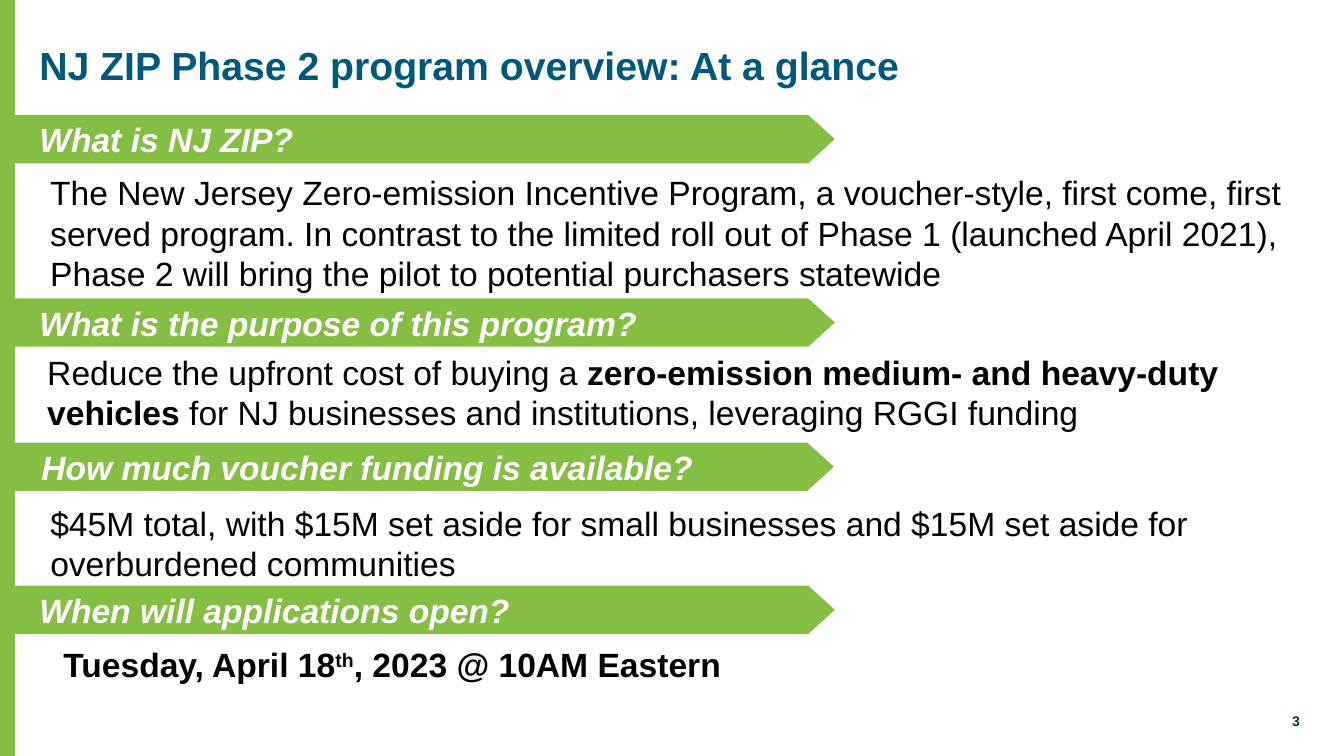
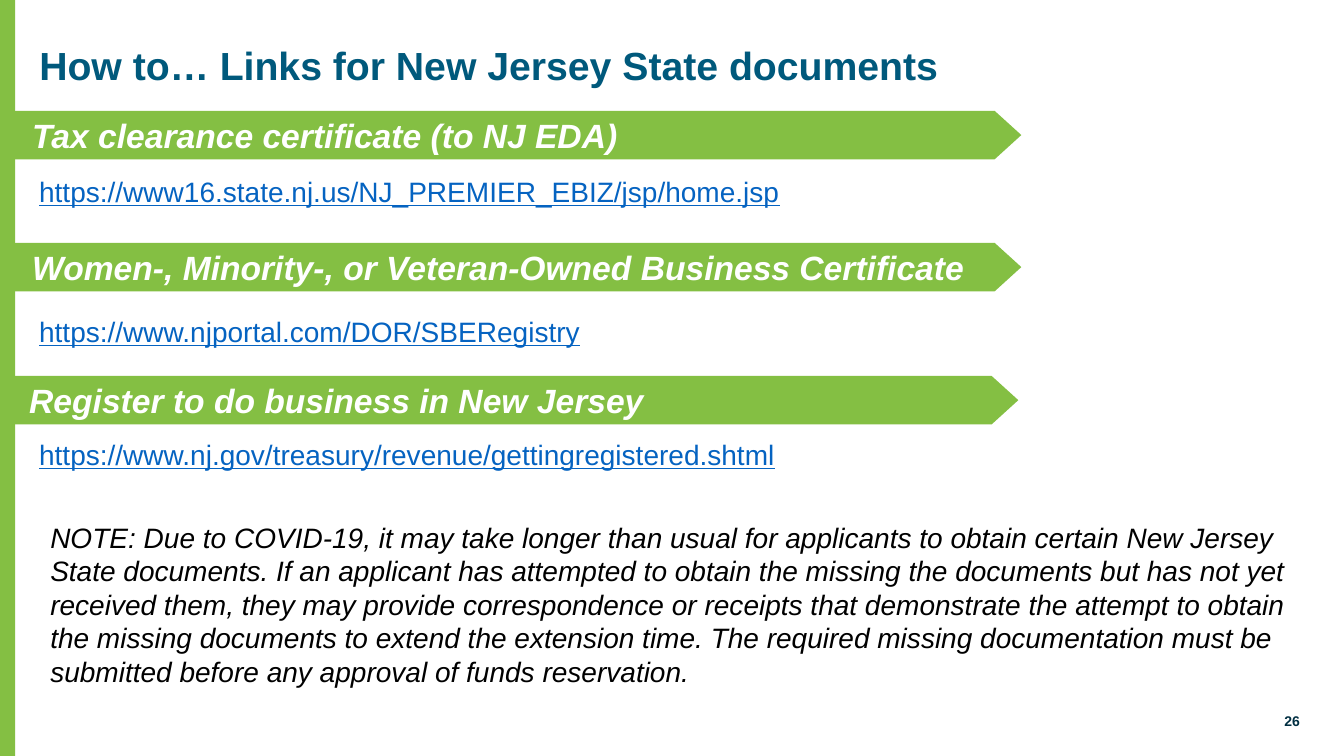
from pptx import Presentation
from pptx.dml.color import RGBColor
from pptx.enum.shapes import MSO_SHAPE
from pptx.enum.text import MSO_ANCHOR, PP_ALIGN
from pptx.util import Inches, Pt

RECTANGLE, ARROW = MSO_SHAPE.RECTANGLE, MSO_SHAPE.RIGHT_ARROW
TOP, MIDDLE = MSO_ANCHOR.TOP, MSO_ANCHOR.MIDDLE
LEFT, RIGHT = PP_ALIGN.LEFT, PP_ALIGN.RIGHT

GREEN = RGBColor(0x84, 0xBF, 0x43)
TEAL = RGBColor(0x00, 0x59, 0x7C)
NAVY = RGBColor(0x00, 0x2F, 0x42)
LINK_BLUE = RGBColor(0x05, 0x63, 0xC1)
BLACK = RGBColor(0, 0, 0)
WHITE = RGBColor(255, 255, 255)
FONT = "Arial"
SLIDE_WIDTH, SLIDE_HEIGHT = 13.33, 7.5
HEADING_HEIGHT = 0.48


class Deck:
    """Holds the shared style and the slide being built."""

    def __init__(self):
        self.presentation = Presentation()
        self.presentation.slide_width = Inches(SLIDE_WIDTH)
        self.presentation.slide_height = Inches(SLIDE_HEIGHT)
        self.slide = None

    def style(self, paragraph, size, color, bold=False, italic=False,
              underline=False, align=LEFT):
        paragraph.alignment = align
        font = paragraph.font
        font.name, font.size = FONT, Pt(size)
        font.bold, font.italic, font.underline = bold, italic, underline
        font.color.rgb = color

    def add_slide(self, title, number):
        layout = self.presentation.slide_layouts.get_by_name("Title Only")
        self.slide = self.presentation.slides.add_slide(layout)
        self.green_shape(RECTANGLE, 0, 0, 0.15, SLIDE_HEIGHT)
        heading = self.slide.shapes.title
        heading.left, heading.top = Inches(0.29), Inches(0.41)
        heading.width, heading.height = Inches(12.7), Inches(0.96)
        frame = heading.text_frame
        frame.text = title
        frame.vertical_anchor = TOP
        paragraph = frame.paragraphs[0]
        paragraph.line_spacing = 0.9
        self.style(paragraph, 28, TEAL, bold=True)
        self.text([str(number)], 12.15, 6.95, 0.84, 0.4, size=10, color=NAVY,
                  anchor=MIDDLE, bold=True, align=RIGHT)

    def green_shape(self, preset, left, top, width, height):
        shape = self.slide.shapes.add_shape(
            preset, Inches(left), Inches(top), Inches(width), Inches(height))
        shape.shadow.inherit = False
        shape.fill.solid()
        shape.fill.fore_color.rgb = GREEN
        shape.line.fill.background()
        return shape

    def heading(self, words, left, top, width):
        arrow = self.green_shape(ARROW, left, top, width, HEADING_HEIGHT)
        arrow.adjustments[0], arrow.adjustments[1] = 1, 0.55
        frame = arrow.text_frame
        frame.word_wrap = True
        frame.vertical_anchor = MIDDLE
        frame.margin_left = Inches(0.29)
        frame.text = words
        self.style(frame.paragraphs[0], 24, WHITE, bold=True, italic=True)

    def text(self, parts, left, top, width, height, size=24, color=BLACK,
             anchor=TOP, **look):
        box = self.slide.shapes.add_textbox(
            Inches(left), Inches(top), Inches(width), Inches(height))
        frame = box.text_frame
        frame.word_wrap = True
        frame.vertical_anchor = anchor
        paragraph = frame.paragraphs[0]
        self.style(paragraph, size, color, **look)
        for part in parts:
            words, emphasis = part if isinstance(part, tuple) else (part, None)
            run = paragraph.add_run()
            run.text = words
            if emphasis == "bold":
                run.font.bold = True
            elif emphasis == "superscript":
                run._r.get_or_add_rPr().set("baseline", "30000")

    def link(self, address, top):
        self.text([address], 0.29, top, 9.8, 0.44, size=20, color=LINK_BLUE,
                  underline=True)


def build_overview(deck):
    deck.add_slide("NJ ZIP Phase 2 program overview: At a glance", 3)
    for question, left, top, width in (
            ("What is NJ ZIP?", 0.1, 1.14, 8.18),
            ("What is the purpose of this program?", 0.1, 2.96, 8.18),
            ("How much voucher funding is available?", 0.12, 4.39, 8.15),
            ("When will applications open?", 0.1, 5.81, 8.18)):
        deck.heading(question, left, top, width)
    deck.text(["The New Jersey Zero-emission Incentive Program, a voucher-style, "
               "first come, first served program. In contrast to the limited roll "
               "out of Phase 1 (launched April 2021), Phase 2 will bring the pilot "
               "to potential purchasers statewide"], 0.4, 1.66, 12.46, 1.31)
    deck.text(["Reduce the upfront cost of buying a ",
               ("zero-emission medium- and heavy-duty vehicles ", "bold"),
               "for NJ businesses and institutions, leveraging RGGI funding"],
              0.37, 3.44, 12.49, 0.91)
    deck.text(["$45M total, with $15M set aside for small businesses and $15M "
               "set aside for overburdened communities"], 0.4, 4.94, 12.59, 0.91)
    deck.text(["Tuesday, April 18", ("th", "superscript"),
               ", 2023 @ 10AM Eastern"], 0.53, 6.34, 11.62, 0.5, bold=True)


def build_links(deck):
    deck.add_slide("How to… Links for New Jersey State documents", 26)
    for document, left, top, width, address, address_top in (
            ("Tax clearance certificate (to NJ EDA)", 0.03, 1.1, 10.1,
             "https://www16.state.nj.us/NJ_PREMIER_EBIZ/jsp/home.jsp", 1.68),
            ("Women-, Minority-, or Veteran-Owned Business Certificate",
             0.03, 2.41, 10.1,
             "https://www.njportal.com/DOR/SBERegistry", 3.07),
            ("Register to do business in New Jersey", 0, 3.73, 10.1,
             "https://www.nj.gov/treasury/revenue/gettingregistered.shtml", 4.29)):
        deck.heading(document, left, top, width)
        deck.link(address, address_top)
    deck.text(["NOTE: Due to COVID-19, it may take longer than usual for applicants "
               "to obtain certain New Jersey State documents. If an applicant has "
               "attempted to obtain the missing the documents but has not yet "
               "received them, they may provide correspondence or receipts that "
               "demonstrate the attempt to obtain the missing documents to extend "
               "the extension time. The required missing documentation must be "
               "submitted before any approval of funds reservation."],
              0.4, 5.11, 12.59, 1.78, size=20, italic=True)


def main():
    deck = Deck()
    build_overview(deck)
    build_links(deck)
    deck.presentation.save("out.pptx")


if __name__ == "__main__":
    main()
